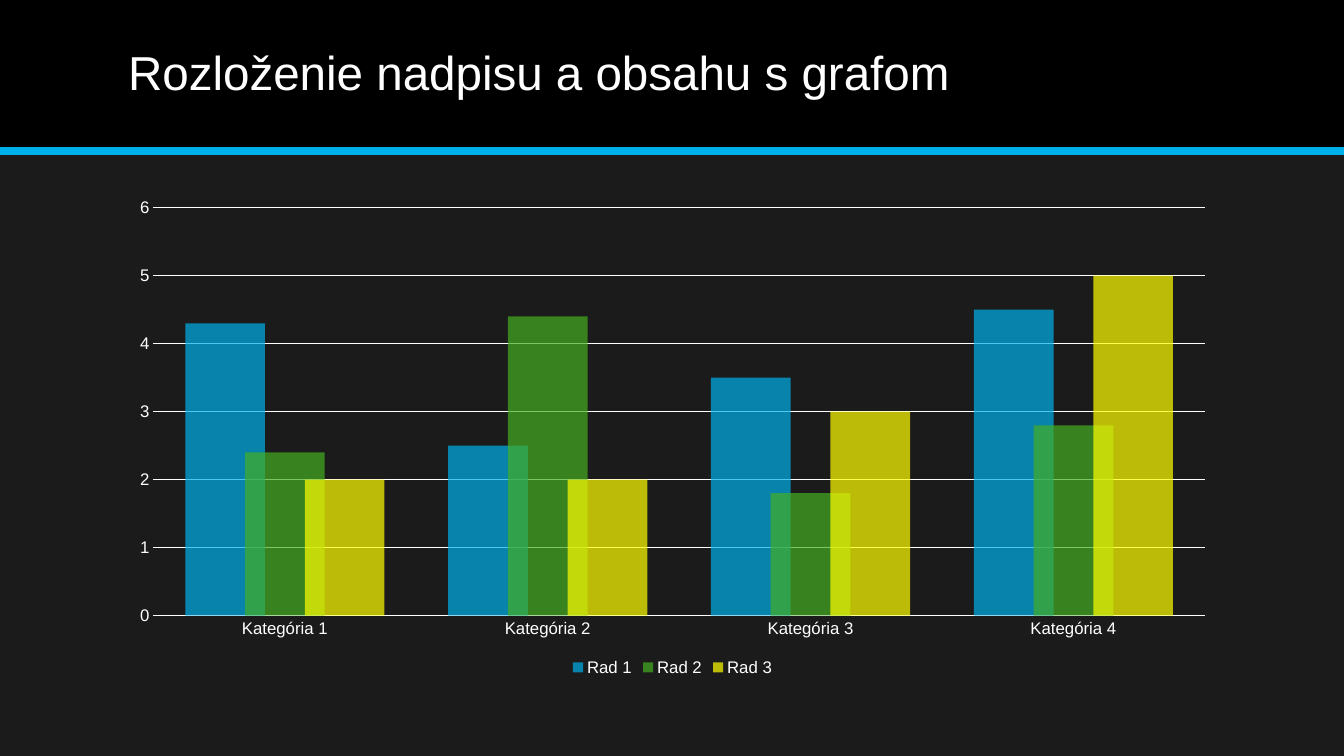
from lxml import etree
from pptx import Presentation
from pptx.chart.data import CategoryChartData as ChartData
from pptx.dml.color import RGBColor
from pptx.enum.chart import XL_CHART_TYPE as Kind
from pptx.enum.chart import XL_LEGEND_POSITION as Place
from pptx.enum.chart import XL_TICK_MARK as Tick
from pptx.enum.shapes import MSO_CONNECTOR as Link
from pptx.enum.shapes import MSO_SHAPE as Shape
from pptx.enum.text import MSO_ANCHOR as Anchor
from pptx.enum.text import PP_ALIGN as Align
from pptx.oxml.ns import qn
from pptx.util import Inches, Pt

WIDTH, HEIGHT = Inches(13.33), Inches(7.5)
HEAD = HEIGHT // 5
LEFT, SPAN = Inches(1.17), Inches(11)
WHITE, BLUE = "FFFFFF", "00B0EA"
CATS = [f"Kategória {n}" for n in range(1, 5)]
ROWS = [
    ("Rad 1", BLUE, (4.3, 2.5, 3.5, 4.5)),
    ("Rad 2", "45AE22", (2.4, 4.4, 1.8, 2.8)),
    ("Rad 3", "FFFF00", (2, 2, 3, 5)),
]


def paint(fill, color, alpha=None):
    """Fill with a solid colour; alpha is opacity in percent."""
    fill.solid()
    fill.fore_color.rgb = RGBColor.from_string(color)
    if alpha is not None:
        tint = fill.fore_color._xFill.find(qn("a:srgbClr"))
        etree.SubElement(tint, qn("a:alpha")).set("val", str(alpha * 1000))


def stroke(line, color, width):
    paint(line.fill, color)
    line.width = Pt(width)


def style(font, size):
    font.name, font.size, font.bold = "Arial", Pt(size), False
    font.color.rgb = RGBColor.from_string(WHITE)


def add_head(slide):
    """Put the black band behind the title and draw the rule below it."""
    band = slide.shapes.add_shape(Shape.RECTANGLE, 0, 0, WIDTH, HEAD)
    band.shadow.inherit = False
    paint(band.fill, "000000")
    band.line.fill.background()
    slide.shapes.title._element.addprevious(band._element)
    rule = slide.shapes.add_connector(Link.STRAIGHT, 0, HEAD, WIDTH, HEAD)
    stroke(rule.line, BLUE, 6)
    etree.SubElement(rule._element.spPr, qn("a:effectLst"))


def add_title(slide, text):
    title = slide.shapes.title
    title.left, title.top = LEFT, Inches(0.14)
    title.width, title.height = SPAN, Inches(1.2)
    frame = title.text_frame
    frame.text = text
    frame.word_wrap = True
    frame.vertical_anchor = Anchor.MIDDLE
    line = frame.paragraphs[0]
    line.alignment, line.line_spacing = Align.LEFT, 0.9
    style(line.font, 34)


def add_bars(slide):
    data = ChartData()
    data.categories = CATS
    for name, _, vals in ROWS:
        data.add_series(name, vals)
    chart = slide.shapes.add_chart(
        Kind.COLUMN_CLUSTERED, LEFT, HEIGHT // 4, SPAN, HEIGHT * 0.65, data
    ).chart
    style(chart.font, 10)
    chart.has_title = False
    chart.has_legend = True
    legend = chart.legend
    legend.position, legend.include_in_layout = Place.BOTTOM, False
    style(legend.font, 12)

    plot = chart.plots[0]
    plot.gap_width, plot.overlap, plot.vary_by_categories = 80, 25, False
    for bars, (_, color, _) in zip(plot.series, ROWS):
        paint(bars.format.fill, color, 70)
        bars.invert_if_negative = False

    for axis in (chart.category_axis, chart.value_axis):
        axis.major_tick_mark = axis.minor_tick_mark = Tick.NONE
        style(axis.tick_labels.font, 12)
    stroke(chart.category_axis.format.line, WHITE, 1.25)
    scale = chart.value_axis
    scale.minimum_scale, scale.maximum_scale, scale.major_unit = 0, 6, 1
    scale.format.line.fill.background()
    stroke(scale.major_gridlines.format.line, WHITE, 0.75)


def main():
    deck = Presentation()
    deck.slide_width, deck.slide_height = WIDTH, HEIGHT
    slide = deck.slides.add_slide(deck.slide_layouts[5])
    paint(slide.background.fill, "1B1B1B")
    add_head(slide)
    add_title(slide, "Rozloženie nadpisu a obsahu s grafom")
    add_bars(slide)
    deck.save("out.pptx")


if __name__ == "__main__":
    main()
